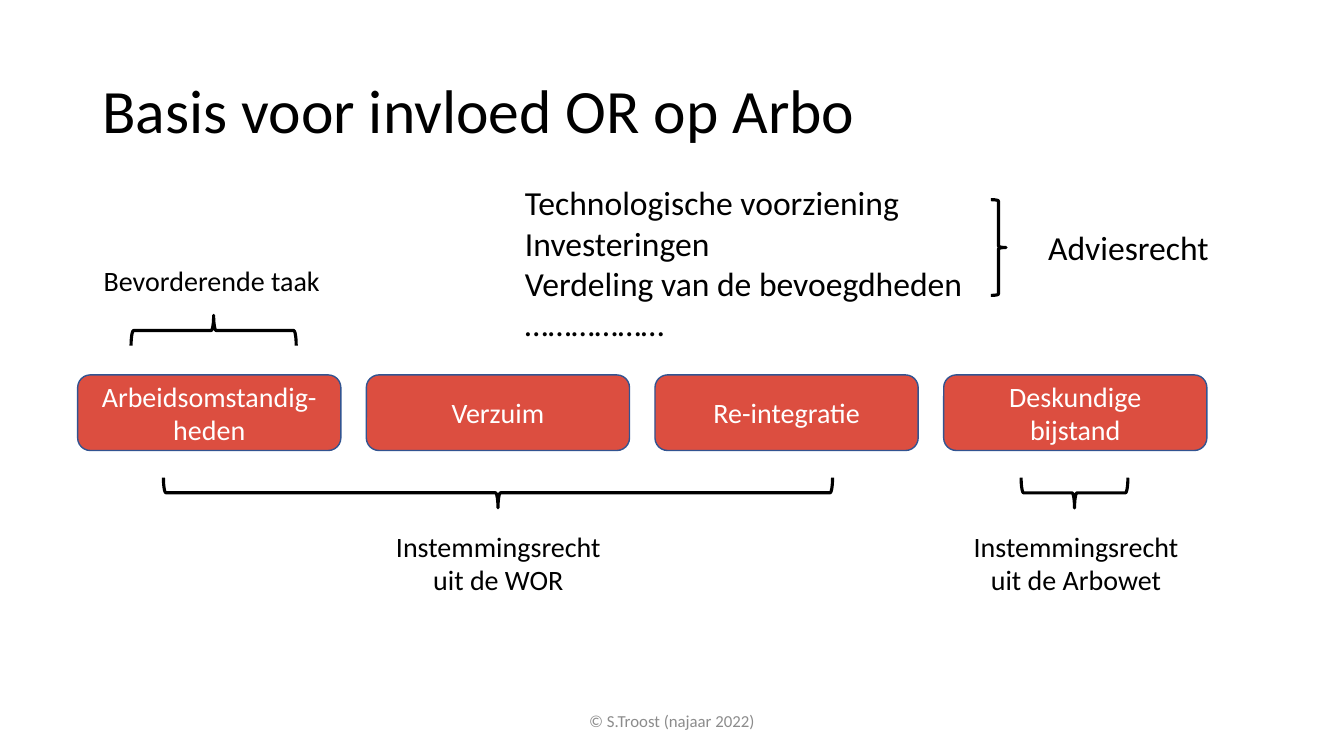
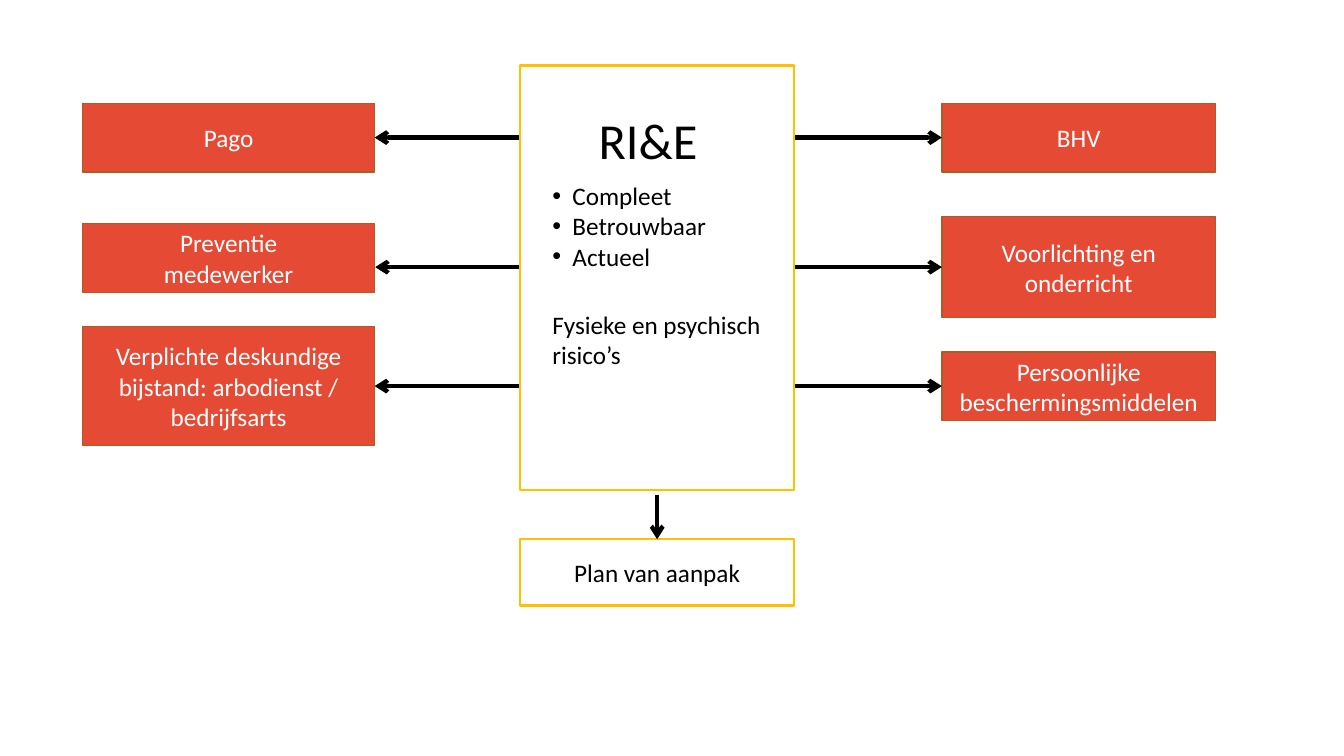
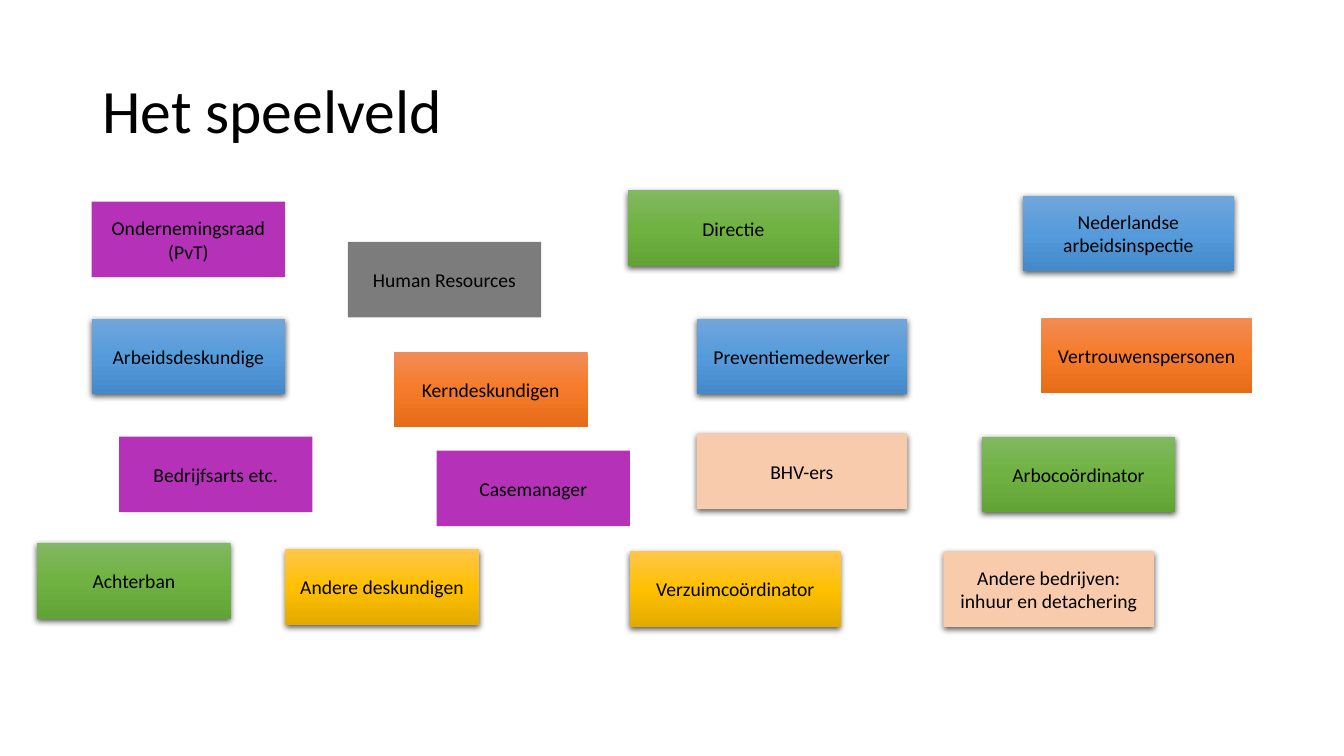
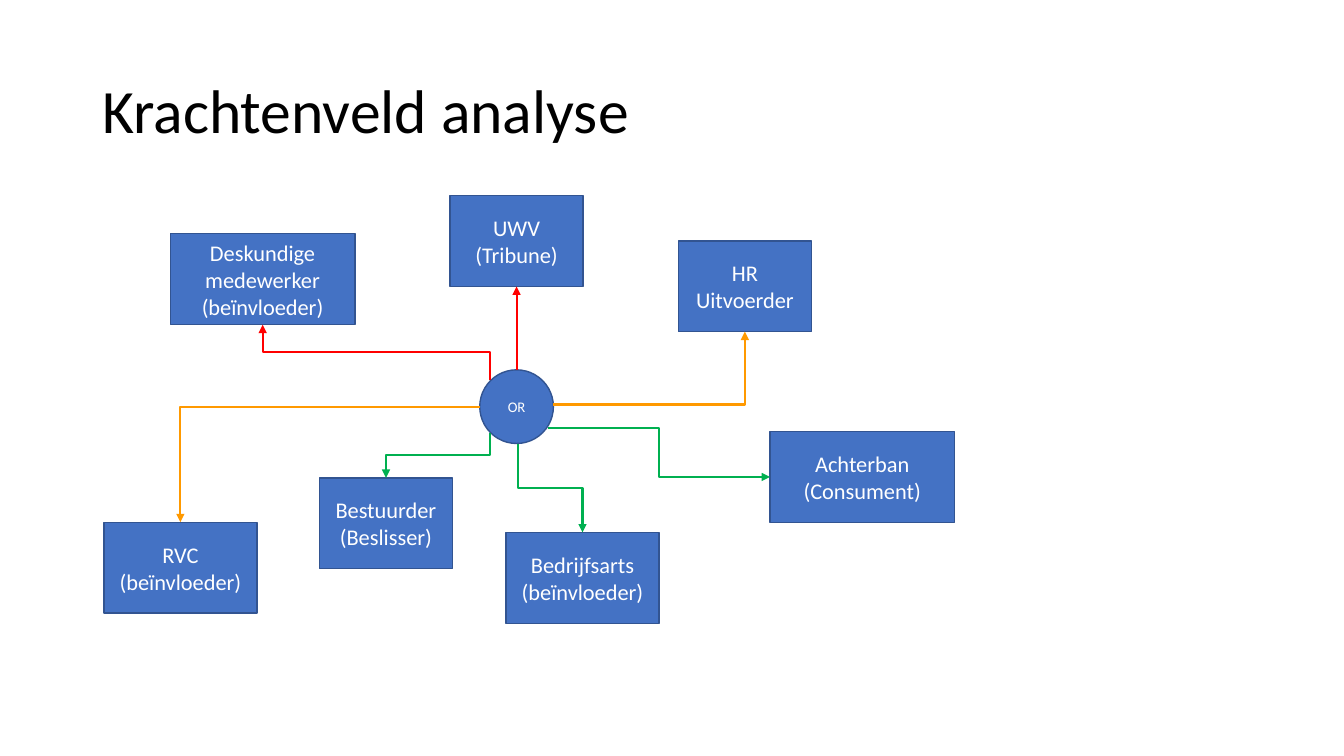
from copy import deepcopy

from pptx import Presentation
from pptx import util as u
from pptx.dml.color import RGBColor
from pptx.enum import shapes, text
from pptx.oxml import parse_xml
from pptx.oxml.ns import nsdecls, qn
from pptx.oxml.xmlchemy import OxmlElement

Pt = u.Pt
KIND = shapes.MSO_SHAPE
LINK = shapes.MSO_CONNECTOR
LEFT, MID = text.PP_ALIGN.LEFT, text.PP_ALIGN.CENTER

# Colours
BLACK = RGBColor(0x00, 0x00, 0x00)
WHITE = RGBColor(0xFF, 0xFF, 0xFF)
MUTED = RGBColor(0x8C, 0x8C, 0x8C)
BRICK = RGBColor(0xDC, 0x4E, 0x40)
TOMATO = RGBColor(0xE5, 0x4A, 0x35)
BROWN = RGBColor(0xAF, 0x5C, 0x24)
BLUE = RGBColor(0x44, 0x72, 0xC4)
NAVY = RGBColor(0x32, 0x54, 0x91)
GOLD = RGBColor(0xFF, 0xC0, 0x00)
RED = RGBColor(0xFF, 0x00, 0x00)
GREEN = RGBColor(0x00, 0xB0, 0x50)
AMBER = RGBColor(0xFF, 0x99, 0x00)
PURPLE = RGBColor(0xB5, 0x32, 0xB8)
GREY = RGBColor(0x7C, 0x7C, 0x7C)
PEACH = RGBColor(0xF8, 0xCB, 0xAD)

# Gradients: top, middle, bottom
ORANGE = [RGBColor(0xF1, 0x8C, 0x57), RGBColor(0xF6, 0x7B, 0x28), RGBColor(0xE5, 0x6C, 0x19)]
YELLOW = [RGBColor(0xFF, 0xC6, 0x4B), GOLD, RGBColor(0xE3, 0xAB, 0x00)]
LEAF = [RGBColor(0x81, 0xB8, 0x61), RGBColor(0x6F, 0xB2, 0x42), RGBColor(0x62, 0xA3, 0x36)]
SKY = [RGBColor(0x71, 0xA6, 0xDB), RGBColor(0x55, 0x9B, 0xDB), RGBColor(0x44, 0x8A, 0xCA)]


def put(item, **vals):
    for key, val in vals.items():
        setattr(item, key, val)


class Deck:
    font = "Calibri"

    def __init__(self):
        self.prs = Presentation()
        put(self.prs, slide_width=Pt(960), slide_height=Pt(540))

    def page(self, title=None):
        self.slide = self.prs.slides.add_slide(self.prs.slide_layouts[6])
        self.items = self.slide.shapes
        if title:
            box = self.label(title, 66, 28.8, 828, 104.4, 44, wrap=True)
            box.text_frame.vertical_anchor = text.MSO_ANCHOR.MIDDLE
            box.text_frame.paragraphs[0].line_spacing = 0.9

    def foot(self, words):
        box = self.label(words, 318, 500.5, 324, 28.8, 12, MUTED, MID, True)
        box.text_frame.vertical_anchor = text.MSO_ANCHOR.MIDDLE

    def say(self, frame, words, size, color, align, dots=False):
        for i, line in enumerate(words.split("\n")):
            para = frame.add_paragraph() if i else frame.paragraphs[0]
            para.alignment = align
            if dots:
                props = para._p.get_or_add_pPr()
                props.set("marL", str(Pt(14.4)))
                props.set("indent", str(-Pt(14.4)))
                for tag, key, val in (("a:buFont", "typeface", "Arial"), ("a:buChar", "char", "•")):
                    mark = OxmlElement(tag)
                    mark.set(key, val)
                    props.append(mark)
            run = para.add_run()
            run.text = line
            put(run.font, name=self.font, size=Pt(size))
            run.font.color.rgb = color

    def label(self, words, x, y, w, h, size, color=BLACK, align=LEFT, wrap=False, dots=False):
        box = self.items.add_textbox(Pt(x), Pt(y), Pt(w), Pt(h))
        box.text_frame.word_wrap = wrap
        self.say(box.text_frame, words, size, color, align, dots)
        return box

    def shape(self, kind, x, y, w, h, fill=None, edge=None, width=1):
        item = self.items.add_shape(kind, Pt(x), Pt(y), Pt(w), Pt(h))
        item.shadow.inherit = False
        if fill is None:
            item.fill.background()
        elif isinstance(fill, list):
            self.blend(item, fill)
        else:
            item.fill.solid()
            item.fill.fore_color.rgb = fill
        if edge is None:
            item.line.fill.background()
        else:
            item.line.color.rgb = edge
            item.line.width = Pt(width)
        return item

    def box(self, words, x, y, w, h, size, fill, edge=None, color=WHITE, width=1, kind=KIND.RECTANGLE):
        item = self.shape(kind, x, y, w, h, fill, edge, width)
        if words:
            self.say(item.text_frame, words, size, color, MID)
        return item

    def blend(self, item, colors):
        item.fill.gradient()
        item.fill.gradient_angle = 270
        stops = item._element.spPr.find(qn("a:gradFill")).find(qn("a:gsLst"))
        stops.append(deepcopy(stops[0]))
        for i, stop in enumerate(item.fill.gradient_stops):
            stop.color.rgb = colors[i]
            stop.position = i / 2

    def shade(self, item):
        item._element.spPr.find(qn("a:effectLst")).append(parse_xml(
            f'<a:outerShdw {nsdecls("a")} blurRad="57150" dist="19050" dir="5400000" '
            'algn="ctr" rotWithShape="0"><a:srgbClr val="000000">'
            '<a:alpha val="63000"/></a:srgbClr></a:outerShdw>'))

    def brace(self, x, y, w, h, turn=0):
        item = self.shape(KIND.RIGHT_BRACE, x, y, w, h, None, BLACK, 2.25)
        item.rotation = turn

    def line(self, start, end, color, width, kind=LINK.STRAIGHT, tip="triangle", both=False):
        item = self.items.add_connector(kind, *(Pt(v) for v in (*start, *end)))
        item.line.color.rgb = color
        item.line.width = Pt(width)
        props = item._element.spPr
        for tag in ("a:headEnd", "a:tailEnd") if both else ("a:tailEnd",):
            mark = OxmlElement(tag)
            mark.set("type", tip)
            props.find(qn("a:ln")).append(mark)
        props.append(OxmlElement("a:effectLst"))
        return item

    def corner(self, start, end, color):
        """One bend: across, then up or down."""
        item = self.line(start, end, color, 1.5, LINK.ELBOW)
        item._element.spPr.find(qn("a:prstGeom")).set("prst", "bentConnector2")

    def step(self, start, end, color):
        """Two bends: up or down, across, and on."""
        (ax, ay), (bx, by) = start, end
        mx, my = (ax + bx) / 2, (ay + by) / 2
        dx, dy = abs(bx - ax) / 2, abs(by - ay) / 2
        item = self.line((mx - dy, my - dx), (mx + dy, my + dx), color, 1.5, LINK.ELBOW)
        down = by > ay
        frame = item._element.spPr.find(qn("a:xfrm"))
        frame.set("rot", str((90 if down else 270) * 60000))
        if down == (bx > ax):
            frame.set("flipV", "1")


def basis(d):
    d.page("Basis voor invloed OR op Arbo")
    d.foot("© S.Troost (najaar 2022)")
    # Row of themes
    names = ("Arbeidsomstandig-\nheden", "Verzuim", "Re-integratie", "Deskundige\nbijstand")
    for i, name in enumerate(names):
        d.box(name, 55.5 + 206.2 * i, 267.8, 188, 54, 20, BRICK, NAVY, kind=KIND.ROUNDED_RECTANGLE)
    # Braces
    d.brace(344.9, 113, 21.6, 478, 90)
    d.brace(141.8, 177.1, 21.6, 118, 270)
    d.brace(707.8, 142.6, 10.8, 68.4)
    d.brace(756.7, 313.9, 21.6, 76.3, 90)
    # Rights
    for x, law in ((275, "WOR"), (687.6, "Arbowet")):
        d.label(f"Instemmingsrecht\nuit de {law}", x, 374.4, 162, 55.4, 20, align=MID)
    d.label("Bevorderende taak", 67, 185, 170.6, 31.7, 20)
    d.label("Technologische voorziening\nInvesteringen\nVerdeling van de bevoegdheden\n………………",
            367.9, 126.7, 330.5, 123.8, 24)
    d.label("Adviesrecht", 741.6, 158.4, 130.3, 36, 24)


def risk(d):
    d.page()
    # Side boxes: text, top, height
    sides = (
        (59, 208.6, (("Pago", 73.8, 49), ("Preventie\nmedewerker", 159.8, 49),
                     ("Verplichte deskundige bijstand: arbodienst / bedrijfsarts", 233.3, 85))),
        (672.8, 195.5, (("BHV", 73.8, 49), ("Voorlichting en onderricht", 154.8, 72),
                        ("Persoonlijke\nbeschermingsmiddelen", 251.3, 49))),
    )
    left, right = ([d.box(name, x, y, w, h, 18, TOMATO, BROWN) for name, y, h in rows]
                   for x, w, rows in sides)
    # Two-way arrows behind the centre
    for i, y in enumerate((98.3, 190.8, 275.8)):
        arrow = d.line((268, y), (672.8, y), BLACK, 3, tip="arrow", both=True)
        if i != 1:
            arrow.begin_connect(left[i], 3)
        arrow.end_connect(right[i], 1)
    # Centre
    d.box("", 371.5, 46.8, 195.8, 303.1, 18, WHITE, GOLD, width=1.75)
    d.label("RI&E", 420.5, 74.2, 100, 51, 36)
    d.label("Compleet\nBetrouwbaar\nActueel", 387.4, 125.3, 169.2, 72.7, 18, wrap=True, dots=True)
    d.label("Fysieke en psychisch risico’s", 387.4, 217.4, 164.9, 51, 18, wrap=True)
    # Plan
    plan = d.box("Plan van aanpak", 371.5, 385.2, 195.8, 47.5, 18, WHITE, GOLD, BLACK, 1.75)
    d.line((469.4, 353.5), (469.4, 385.2), BLACK, 3, tip="arrow").end_connect(plan, 0)


def field(d):
    d.page("Het speelveld")
    slim, wide = 138.2, 150.5
    tiles = (
        ("Bedrijfsarts etc.", 85, 311.8, slim, PURPLE),
        ("Kerndeskundigen", 281.5, 251.3, slim, ORANGE),
        ("Verzuimcoördinator", 450, 393.8, wide, YELLOW),
        ("Andere deskundigen", 203.8, 392.4, slim, YELLOW),
        ("Arbocoördinator", 701.3, 311.8, slim, LEAF),
        ("Directie", 448.6, 136, wide, LEAF),
        ("Human Resources", 248.4, 172.8, slim, GREY),
        ("Ondernemingsraad\n(PvT)", 65.5, 144, slim, PURPLE),
        ("Arbeidsdeskundige", 65.5, 227.5, slim, SKY),
        ("Preventiemedewerker", 497.5, 227.5, wide, SKY),
        ("Nederlandse arbeidsinspectie", 730.8, 139.7, wide, SKY),
        ("Vertrouwenspersonen", 743.8, 226.8, wide, ORANGE),
        ("Casemanager", 311.8, 321.8, slim, PURPLE),
        ("Achterban", 26.6, 388, slim, LEAF),
        ("BHV-ers", 497.5, 309.6, wide, PEACH),
        ("Andere bedrijven: inhuur en detachering", 673.9, 393.8, wide, PEACH),
    )
    for name, x, y, w, fill in tiles:
        tile = d.box(name, x, y, w, 54, 14, fill, color=BLACK)
        if fill in (YELLOW, LEAF, SKY, PEACH):
            d.shade(tile)


def force(d):
    d.page("Krachtenveld analyse")
    # Players
    hub = d.box("OR", 342.7, 264.2, 52.6, 52.6, 10.5, BLUE, NAVY, kind=KIND.FLOWCHART_CONNECTOR)
    players = (
        ("HR\nUitvoerder", 484.6, 172, 95),
        ("Achterban\n(Consument)", 550, 308.2, 131.8),
        ("Deskundige\nmedewerker\n(beïnvloeder)", 121.7, 167, 131.8),
        ("Bestuurder\n(Beslisser)", 228.2, 341.3, 95),
        ("RVC\n(beïnvloeder)", 74.2, 373, 109.4),
        ("Bedrijfsarts\n(beïnvloeder)", 361.4, 380.2, 109.4),
        ("UWV\n(Tribune)", 321.5, 139.7, 95),
    )
    for name, x, y, w in players:
        last = d.box(name, x, y, w, 65, 16, BLUE, NAVY)
    # Links from the hub
    arrow = d.line((369, 264.2), (369, 204.7), RED, 1.5)
    arrow.begin_connect(hub, 0)
    arrow.end_connect(last, 2)
    d.line((391.7, 306), (550, 340.7), GREEN, 1.5, LINK.ELBOW)
    d.corner((395.3, 289), (532.1, 237), AMBER)
    d.corner((342.7, 290.5), (128.9, 373), AMBER)
    d.step((350, 309), (275.7, 341.3), GREEN)
    d.step((350, 271.5), (187.6, 232), RED)
    d.step((370, 316.8), (416.1, 380.2), GREEN)


def main():
    d = Deck()
    for draw in (basis, risk, field, force):
        draw(d)
    d.prs.save("out.pptx")


if __name__ == "__main__":
    main()
